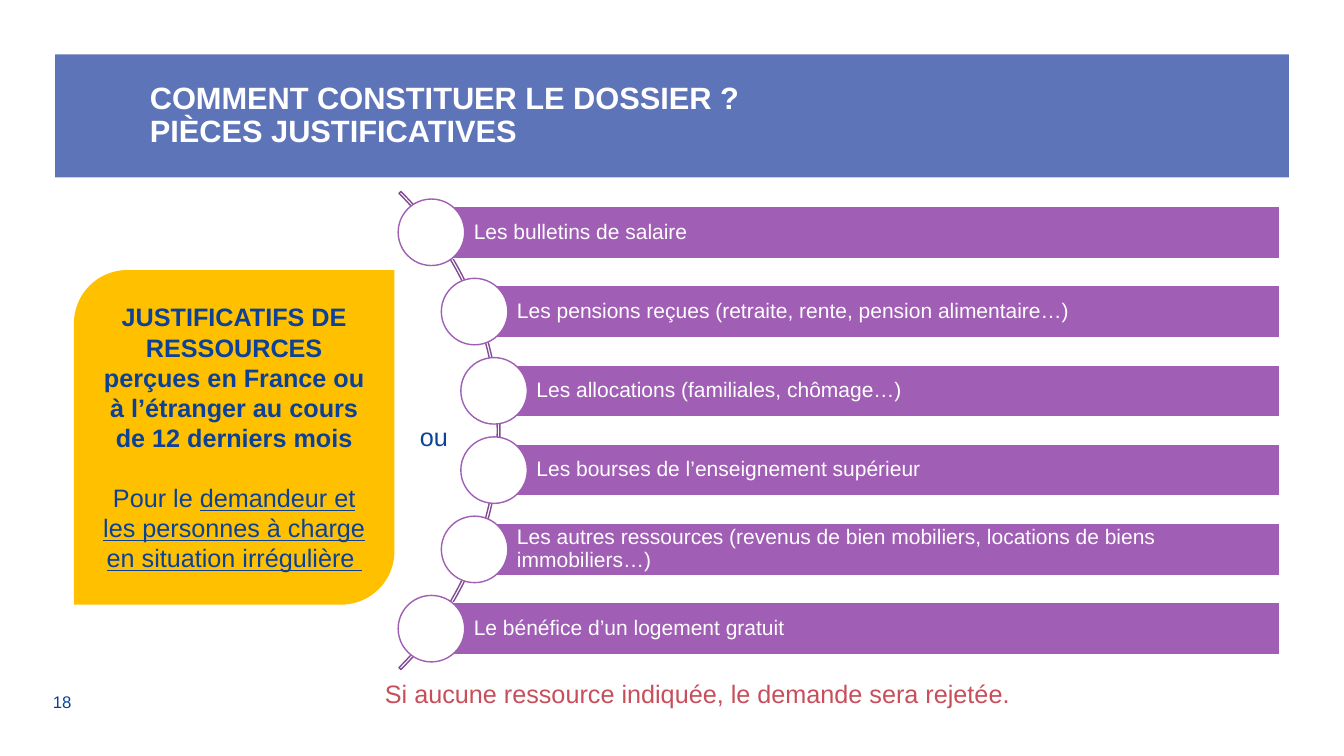
import math
from dataclasses import dataclass

import pptx
import pptx.dml.color
import pptx.enum.shapes
import pptx.enum.text
import pptx.util

SHAPE = pptx.enum.shapes.MSO_SHAPE
ALIGN = pptx.enum.text.PP_ALIGN
ANCHOR = pptx.enum.text.MSO_ANCHOR


@dataclass(frozen=True)
class Theme:
    font: str = "Arial"
    white: str = "FFFFFF"
    navy: str = "0C419A"
    blue: str = "5E74B8"
    purple: str = "A05EB5"
    plum: str = "804B91"
    gold: str = "FFC000"
    red: str = "C74E5A"
    title: int = 22
    body: int = 18
    item: int = 15
    small: int = 12


def rgb(code):
    return pptx.dml.color.RGBColor.from_string(code)


class Sheet:
    """A slide on a grid of square cells, 100 columns wide."""

    def __init__(self, deck, theme):
        self.theme = theme
        self.cell = deck.slide_width / 100
        self.page = deck.slides.add_slide(deck.slide_layouts[5])

    def length(self, cells):
        return pptx.util.Emu(round(cells * self.cell))

    def add_text(self, para, text, *, size, color, bold=False, underline=False):
        span = para.add_run()
        span.text = text
        span.font.name = self.theme.font
        span.font.size = pptx.util.Pt(size)
        span.font.bold = bold
        span.font.underline = underline
        span.font.color.rgb = rgb(color)

    def frame(self, box, anchor=ANCHOR.MIDDLE, insets=None):
        """Prepare a wrapping text frame; insets are left, top, right, bottom."""
        frame = box.text_frame
        frame.word_wrap = True
        frame.auto_size = pptx.enum.text.MSO_AUTO_SIZE.NONE
        frame.vertical_anchor = anchor
        if insets:
            (frame.margin_left, frame.margin_top,
             frame.margin_right, frame.margin_bottom) = map(self.length, insets)
        return frame

    def title(self, lines, *area):
        box = self.page.shapes.title
        box.left, box.top, box.width, box.height = map(self.length, area)
        box.fill.solid()
        box.fill.fore_color.rgb = rgb(self.theme.blue)
        para = self.frame(box, insets=(7.05, 0.6, 0.6, 0.6)).paragraphs[0]
        para.alignment = ALIGN.LEFT
        para.line_spacing = 0.9
        for index, line in enumerate(lines):
            if index:
                para.add_line_break()
            self.add_text(para, line, size=self.theme.title,
                          color=self.theme.white, bold=True)

    def shape(self, kind, *area, fill=None, line=None):
        shape = self.page.shapes.add_shape(kind, *map(self.length, area))
        shape.shadow.inherit = False
        if fill:
            shape.fill.solid()
            shape.fill.fore_color.rgb = rgb(fill)
        else:
            shape.fill.background()
        if line:
            shape.line.color.rgb = rgb(line)
            shape.line.width = pptx.util.Pt(1)
        else:
            shape.line.fill.background()
        return shape

    def label(self, text, *area, size, color, anchor=ANCHOR.TOP):
        box = self.page.shapes.add_textbox(*map(self.length, area))
        para = self.frame(box, anchor).paragraphs[0]
        self.add_text(para, text, size=size, color=color)

    def bar(self, text, *area):
        theme = self.theme
        bar = self.shape(SHAPE.RECTANGLE, *area, fill=theme.purple, line=theme.white)
        para = self.frame(bar, insets=(3.15, 0.3, 0.3, 0.3)).paragraphs[0]
        para.alignment = ALIGN.LEFT
        para.line_spacing = 0.9
        self.add_text(para, text, size=theme.item, color=theme.white)

    def curved_list(self, items):
        """Hang one bar and one dot per item along the right side of a circle."""
        theme = self.theme
        center_x, center_y, radius, orbit = 12.04, 32.04, 25.16, 24.9
        step, bar_height, dot, right = 5.9, 3.86, 4.95, 95.25
        arc = self.shape(SHAPE.BLOCK_ARC, center_x - radius, center_y - radius,
                         2 * radius, 2 * radius, line=theme.plum)
        for index, value in enumerate((189, 27, 0.004)):
            arc.adjustments[index] = value
        for index, item in enumerate(items):
            rise = (index - (len(items) - 1) / 2) * step
            x = center_x + math.sqrt(orbit ** 2 - rise ** 2)
            y = center_y + rise
            self.bar(item, x, y - bar_height / 2, right - x, bar_height)
            self.shape(SHAPE.OVAL, x - dot / 2, y - dot / 2, dot, dot,
                       fill=theme.white, line=theme.purple)

    def summary(self, heading, lead, detail, *area):
        theme = self.theme
        card = self.shape(SHAPE.ROUND_2_DIAG_RECTANGLE, *area, fill=theme.gold)
        frame = self.frame(card)
        style = {"size": theme.body, "color": theme.navy}
        para = frame.paragraphs[0]
        para.alignment = ALIGN.CENTER
        self.add_text(para, heading, bold=True, **style)
        para = frame.add_paragraph()
        para.alignment = ALIGN.CENTER
        para.space_before = pptx.util.Pt(21)
        self.add_text(para, lead, **style)
        self.add_text(para, detail, underline=True, **style)


def main():
    deck = pptx.Presentation()
    deck.slide_width = pptx.util.Inches(13.33)
    deck.slide_height = pptx.util.Inches(7.5)
    theme = Theme()
    sheet = Sheet(deck, theme)

    sheet.label("18", 3.2, 51.1, 5.9, 2.3, size=theme.small, color=theme.navy,
                anchor=ANCHOR.MIDDLE)
    sheet.title(["COMMENT CONSTITUER LE DOSSIER ? ", "PIÈCES JUSTIFICATIVES"],
                4.1, 4.05, 91.8, 9.15)
    sheet.curved_list([
        "Les bulletins de salaire",
        "Les pensions reçues (retraite, rente, pension alimentaire…)",
        "Les allocations (familiales, chômage…)",
        "Les bourses de l’enseignement supérieur",
        "Les autres ressources (revenus de bien mobiliers, locations de biens immobiliers…)",
        "Le bénéfice d’un logement gratuit",
    ])
    sheet.summary(
        "JUSTIFICATIFS DE RESSOURCES perçues en France ou à l’étranger "
        "au cours de 12 derniers mois",
        "Pour le ", "demandeur et les personnes à charge en situation irrégulière ",
        5.5, 20.1, 23.85, 24.9)
    sheet.label("ou", 30.5, 31, 5.3, 3, size=theme.body, color=theme.navy)
    sheet.label("Si aucune ressource indiquée, le demande sera rejetée.",
                27.9, 50.1, 52.8, 3, size=theme.body, color=theme.red)
    deck.save("out.pptx")


if __name__ == "__main__":
    main()
